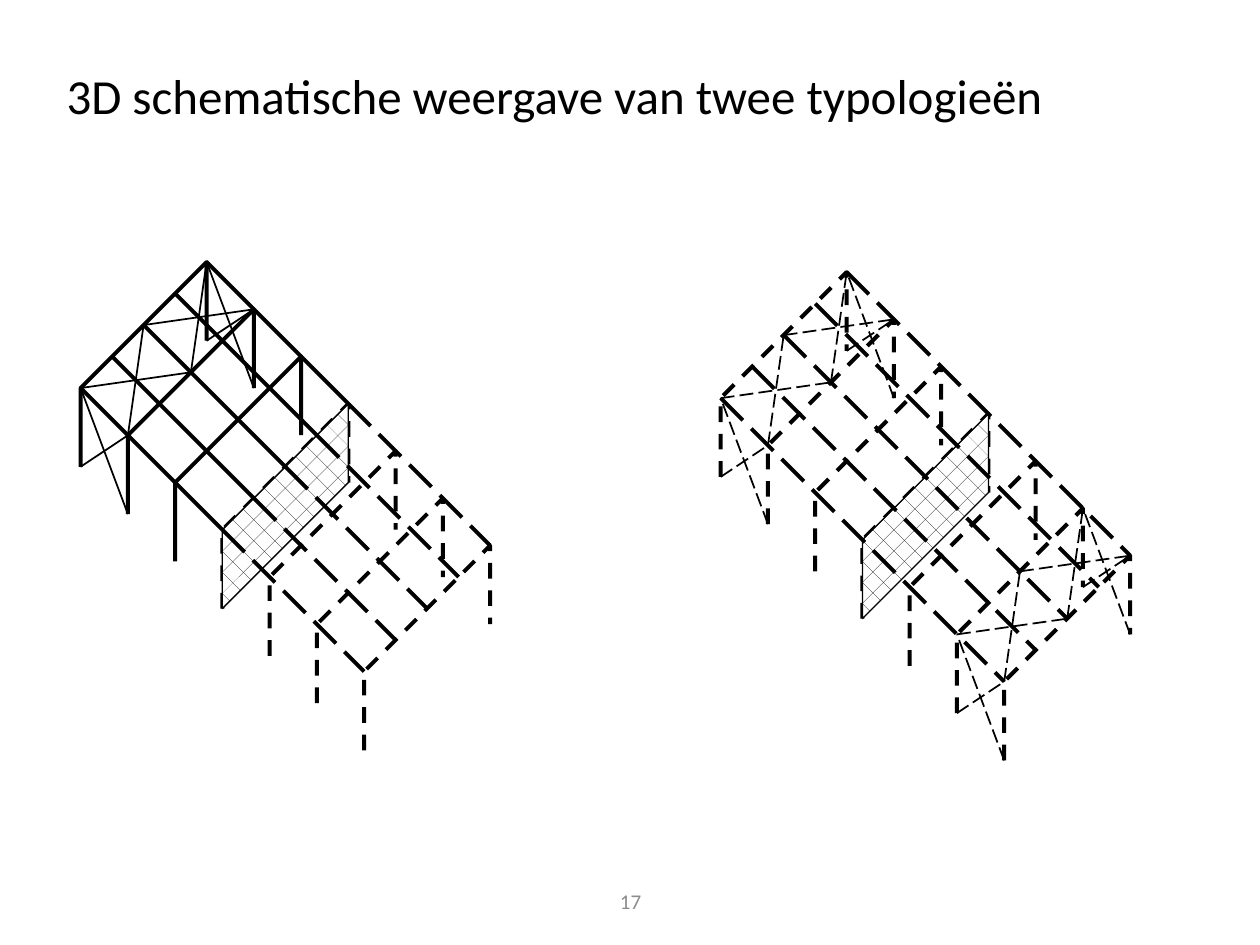
import pptx
import pptx.util
import pptx.oxml
import pptx.dml.color
import pptx.enum.dml
import pptx.enum.shapes
import pptx.enum.text

Inches, Pt = pptx.util.Inches, pptx.util.Pt
RGB = pptx.dml.color.RGBColor.from_string
DASH = pptx.enum.dml.MSO_LINE.DASH
LONG_DASH = pptx.enum.dml.MSO_LINE.LONG_DASH
COLORS = {"ink": "000000", "paper": "FFFFFF", "number": "8C8C8C"}
BAY, LEG = 0.375, 0.625  # frame spacing per axis, column height
EFFECTS = '<a:effectLst xmlns:a="http://schemas.openxmlformats.org/drawingml/2006/main"/>'

prs = pptx.Presentation()
prs.slide_width, prs.slide_height = Inches(10), Inches(7.5)
slide = prs.slides.add_slide(prs.slide_layouts[6])


def project(origin, bay, across, drop=0):
    """Place a point by bay number, share of the span and drop below the roof."""
    return (Inches(origin[0] + BAY * bay + across),
            Inches(origin[1] + BAY * bay - across + drop))


def style_line(sp, width, dash):
    sp.line.color.rgb = RGB(COLORS["ink"])
    sp.line.width = Pt(width)
    if dash:
        sp.line.dash_style = dash


# Title and slide number
texts = [
    ("3D schematische weergave van twee typologieën", (0.43, 0.44, 9.1, 1.27),
     28, "ink", "LEFT", "TOP", 0.08),
    ("17", (3.42, 6.95, 3.17, 0.4), 12, "number", "CENTER", "MIDDLE", 0.05),
]
for text, box, size, color, align, anchor, inset in texts:
    tf = slide.shapes.add_textbox(*map(Inches, box)).text_frame
    tf.word_wrap = True
    tf.margin_top = Inches(inset)
    tf.vertical_anchor = getattr(pptx.enum.text.MSO_ANCHOR, anchor)
    p = tf.paragraphs[0]
    p.text = text
    p.alignment = getattr(pptx.enum.text.PP_ALIGN, align)
    p.font.name, p.font.size = "Calibri", Pt(size)
    p.font.color.rgb = RGB(COLORS[color])

# Cross bracing of one bay: pairs of (bay, across, drop)
braces = [
    ((0, 0, LEG), (1, 0, 0)), ((1, 0, LEG), (0, 0, 0)),
    ((0, 1, LEG), (1, 1, 0)), ((1, 1, LEG), (0, 1, 0)),
    ((0, 0, 0), (1, 0.5, 0)), ((0, 0.5, 0), (1, 1, 0)),
    ((1, 0, 0), (0, 0.5, 0)), ((1, 0.5, 0), (0, 1, 0)),
]
outline = [(0, LEG), (0, 0), (1, 0), (1, LEG)]

# Each hall: roof corner, number of solid frames, purlin runs, braced bays, brace dash
halls = [
    ((0.64, 3.08), 3, [(0, 3, None), (3, 6, LONG_DASH)], [0], None),
    ((5.72, 3.16), 0, [(0, 6, LONG_DASH)], [0, 5], LONG_DASH),
]
for origin, solid_frames, runs, braced_bays, brace_dash in halls:
    s = slide.shapes.add_group_shape().shapes

    # Portal frames from front to rear, then the hatched wall in the middle
    for bay, is_wall in [(n, False) for n in range(6, -1, -1)] + [(3, True)]:
        points = [project(origin, bay, *point) for point in outline]
        builder = s.build_freeform(*points[0], scale=1.0)
        builder.add_line_segments(points[1:], close=is_wall)
        sp = builder.convert_to_shape()
        sp.shadow.inherit = False
        if is_wall:
            sp.fill.patterned()
            sp.fill.pattern = pptx.enum.dml.MSO_PATTERN.DIAGONAL_BRICK
            sp.fill.fore_color.rgb = RGB(COLORS["ink"])
            sp.fill.back_color.rgb = RGB(COLORS["paper"])
            style_line(sp, 0.75, None)
        else:
            sp.fill.background()
            style_line(sp, 2.25, None if bay < solid_frames else DASH)

    # Purlins along the roof and bracing in the end bays
    lines = [((first, i / 4, 0), (last, i / 4, 0), 2.25, dash)
             for first, last, dash in runs for i in range(5)]
    lines += [((bay + a[0], *a[1:]), (bay + b[0], *b[1:]), 1, brace_dash)
              for bay in braced_bays for a, b in braces]
    for start, end, width, dash in lines:
        sp = s.add_connector(pptx.enum.shapes.MSO_CONNECTOR.STRAIGHT,
                             *project(origin, *start), *project(origin, *end))
        style_line(sp, width, dash)
        sp._element.spPr.append(pptx.oxml.parse_xml(EFFECTS))

prs.save("out.pptx")
